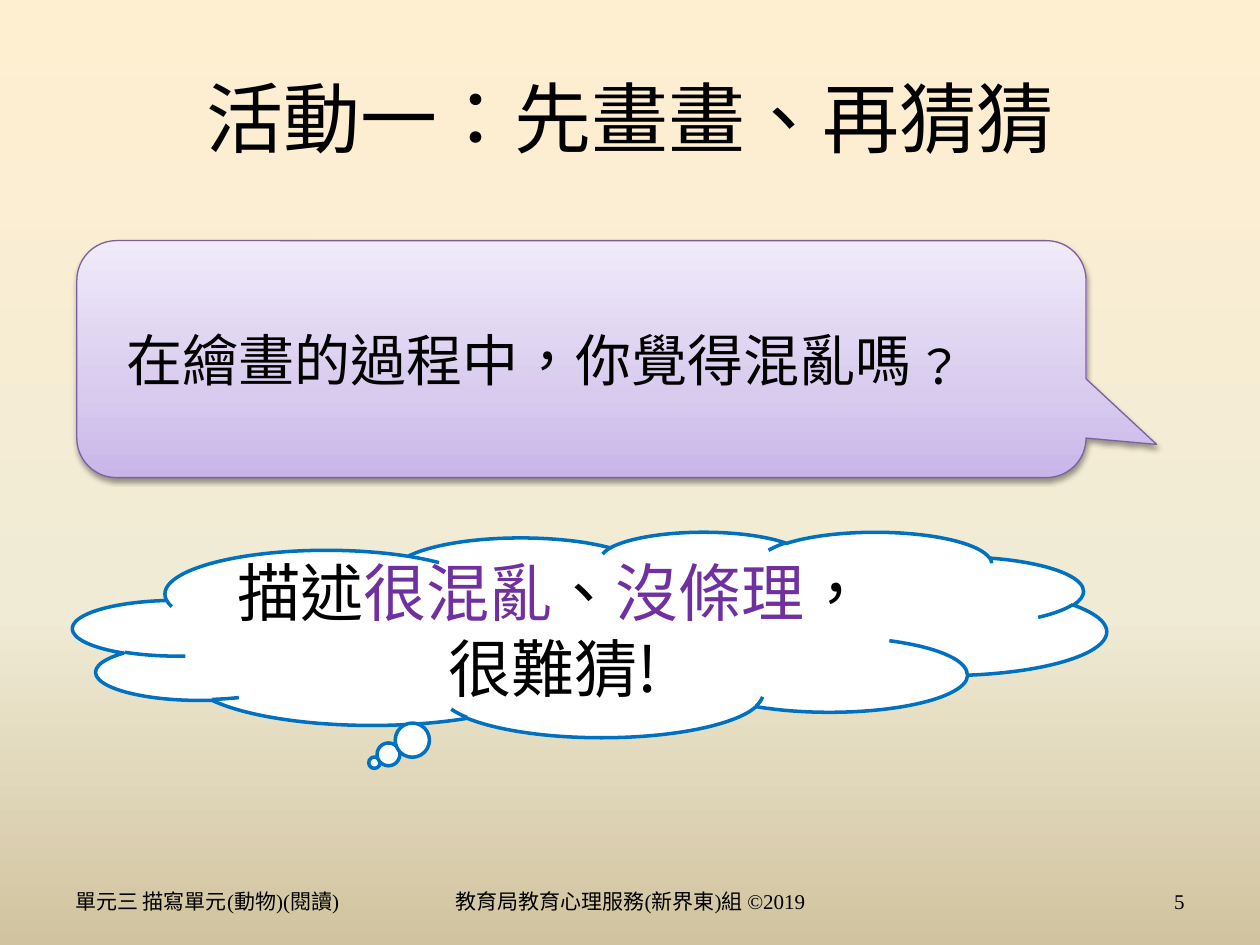
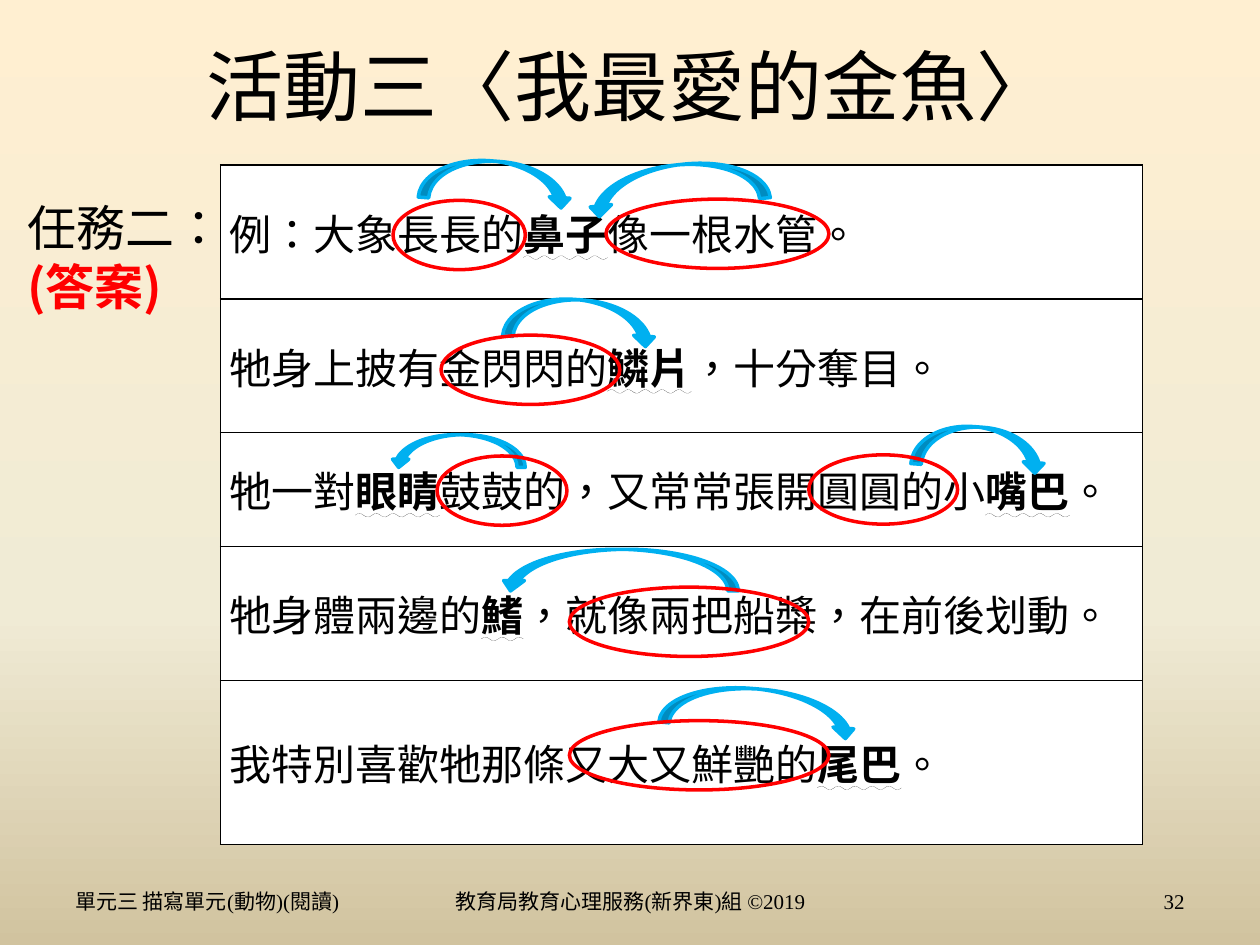
from copy import deepcopy
from lxml.etree import SubElement
from pptx import Presentation
from pptx.dml.color import RGBColor
from pptx.enum.lang import MSO_LANGUAGE_ID
from pptx.enum.shapes import MSO_SHAPE
from pptx.enum.text import MSO_ANCHOR, MSO_UNDERLINE, PP_ALIGN
from pptx.oxml.ns import qn
from pptx.util import Pt

HUE = {
    "ink": "000000", "white": "FFFFFF", "red": "FF0000", "plum": "7030A0",
    "blue": "0070C0", "sky": "00B0F0", "edge": "7D60A0",
    "cream": "FFEFD1", "sand": "F0EBD5", "tan": "D1C39F",
    "lilac": "C9B5E8", "mauve": "D8CBEE", "mist": "F0EAF9",
}
RGB = {name: RGBColor.from_string(code) for name, code in HUE.items()}
NOTO, CABIN, ARIAL, TIMES = "Noto Sans CJK SC", "Cabin", "Arial", "Times New Roman"
LEFT, MID, RIGHT = PP_ALIGN.LEFT, PP_ALIGN.CENTER, PP_ALIGN.RIGHT


def write(para, size, runs, align=LEFT):
    para.alignment = align
    for text, face, hue, bold in runs:
        run = para.add_run()
        run.text = text
        font = run.font
        font.name, font.size, font.bold = face, Pt(size), bold
        font.color.rgb = RGB[hue]
        font.language_id = MSO_LANGUAGE_ID.TRADITIONAL_CHINESE
        SubElement(font._element, qn("a:ea")).set("typeface", NOTO)


def shade(fill, root, angle, stops):
    fill.gradient()
    fill.gradient_angle = angle
    group = next(root.iter(qn("a:gsLst")))
    group.append(deepcopy(group[0]))
    for stop, (place, hue) in zip(fill.gradient_stops, stops):
        stop.position = place
        stop.color.rgb = RGB[hue]


deck = Presentation()
deck.slide_width, deck.slide_height = Pt(720), Pt(540)
master = deck.slide_master
shade(master.background.fill, master._element, 270,
      [(0, "cream"), (0.65, "sand"), (1, "tan")])

pages = []
for number, top, title in [
    ("5", 21.6, [("活動一：先畫畫、再猜猜", CABIN)]),
    ("32", 3.6, [("活動三", NOTO), ("〈我最愛的金魚〉", CABIN)]),
]:
    page = deck.slides.add_slide(deck.slide_layouts[5])
    pages.append(page)
    head = page.shapes.title
    head.left, head.top, head.width, head.height = Pt(36), Pt(top), Pt(648), Pt(90)
    head.text_frame.vertical_anchor = MSO_ANCHOR.MIDDLE
    write(head.text_frame.paragraphs[0], 44,
          [(text, face, "ink", False) for text, face in title], MID)
    for left, width, text, align in [
        (36, 205.2, "單元三 描寫單元(動物)(閱讀)", LEFT),
        (246.2, 228.2, "教育局教育心理服務(新界東)組 ©2019", MID),
        (516.2, 167.8, number, RIGHT),
    ]:
        foot = page.shapes.add_textbox(Pt(left), Pt(500.4), Pt(width), Pt(28.8)).text_frame
        foot.word_wrap = True
        foot.vertical_anchor = MSO_ANCHOR.MIDDLE
        write(foot.paragraphs[0], 12, [(text, TIMES, "ink", False)], align)

draw, task = pages

cloud = draw.shapes.add_shape(MSO_SHAPE.CLOUD_CALLOUT, Pt(41.8), Pt(303.8), Pt(590.4), Pt(117.4))
cloud.shadow.inherit = False
cloud.fill.solid()
cloud.fill.fore_color.rgb = RGB["white"]
cloud.line.color.rgb = RGB["blue"]
cloud.line.width = Pt(2)
cloud.text_frame.word_wrap = True
cloud.text_frame.vertical_anchor = MSO_ANCHOR.MIDDLE
write(cloud.text_frame.paragraphs[0], 36, [
    (text, NOTO, hue, False) for text, hue in [
        ("描述", "ink"), ("很混亂", "plum"), ("、", "ink"),
        ("沒條理", "plum"), ("，很難猜!", "ink")]
], MID)

ask = draw.shapes.add_shape(MSO_SHAPE.ROUNDED_RECTANGULAR_CALLOUT,
                            Pt(43.9), Pt(137.5), Pt(576.7), Pt(135.4))
for spot, value in enumerate([0.57, 0.36, 0.167]):
    ask.adjustments[spot] = value
shade(ask.fill, ask._element, 90, [(0, "lilac"), (0.35, "mauve"), (1, "mist")])
ask.line.color.rgb = RGB["edge"]
ask.line.width = Pt(0.75)
ask.shadow.inherit = False
glow = SubElement(ask._element.spPr.find(qn("a:effectLst")), qn("a:outerShdw"),
                  blurRad=str(Pt(3.1)), dist=str(Pt(1.6)), dir="5400000", rotWithShape="0")
tint = SubElement(glow, qn("a:srgbClr"), val=HUE["ink"])
SubElement(tint, qn("a:alpha"), val="38000")
ask.text_frame.word_wrap = True
ask.text_frame.margin_left = Pt(22)
ask.text_frame.vertical_anchor = MSO_ANCHOR.MIDDLE
write(ask.text_frame.paragraphs[0], 32, [("在繪畫的過程中，你覺得混亂嗎﹖", NOTO, "ink", False)])

rows = [
    (76.5, [("例：大象", CABIN, 0), ("長長的", NOTO, 0), ("鼻子", CABIN, 1),
            ("像一根水管。", NOTO, 0)]),
    (76.5, [("牠身上", ARIAL, 0), ("披有", CABIN, 0), ("金閃閃的", ARIAL, 0),
            ("鱗片", ARIAL, 1), ("，十分奪目。", ARIAL, 0)]),
    (65, [("牠一對", ARIAL, 0), ("眼睛", ARIAL, 1),
          ("鼓鼓的，又常常張開圓圓的小", ARIAL, 0), ("嘴巴", ARIAL, 1), ("。", ARIAL, 0)]),
    (76.5, [("牠身體兩邊的", ARIAL, 0), ("鰭", ARIAL, 1),
            ("，就像兩把船槳，在前後划動。", ARIAL, 0)]),
    (93.7, [("我特別喜歡牠那條又大又鮮艷的", ARIAL, 0), ("尾巴", ARIAL, 1), ("。", ARIAL, 0)]),
]
tall = sum(height for height, parts in rows)
grid = task.shapes.add_table(len(rows), 1, Pt(126), Pt(94.3), Pt(527), Pt(tall)).table
grid.first_row = grid.horz_banding = False
for spot, (height, parts) in enumerate(rows):
    grid.rows[spot].height = Pt(height)
    cell = grid.cell(spot, 0)
    cell.margin_left = cell.margin_right = Pt(5)
    cell.margin_top = cell.margin_bottom = Pt(0)
    cell.vertical_anchor = MSO_ANCHOR.MIDDLE
    for side in ["lnL", "lnR", "lnT", "lnB"]:
        edge = SubElement(cell._tc.tcPr, qn("a:" + side), w=str(Pt(1)))
        SubElement(SubElement(edge, qn("a:solidFill")), qn("a:srgbClr"), val=HUE["ink"])
    cell.fill.solid()
    cell.fill.fore_color.rgb = RGB["white"]
    para = cell.text_frame.paragraphs[0]
    write(para, 24, [(text, face, "ink", bool(key)) for text, face, key in parts])
    for run in para.runs:
        if run.font.bold:
            run.font.underline = MSO_UNDERLINE.WAVY_LINE

note = task.shapes.add_textbox(Pt(8.6), Pt(109.4), Pt(130.3), Pt(74.9)).text_frame
note.word_wrap = True
write(note.paragraphs[0], 28, [("任務二：", NOTO, "ink", False)])
write(note.add_paragraph(), 28, [("(答案)", NOTO, "red", True)])

for left, top, width, height, turn, flip in [
    (239.8, 92.2, 87.8, 23.8, 4.4, False),
    (334.8, 94.3, 104.4, 24.5, 353.6, True),
    (288, 171.4, 87.8, 23.8, 4.4, False),
    (223.2, 248.4, 77, 18.7, 0, True),
    (521.3, 244.1, 77, 23.8, 4.4, False),
    (285.8, 313.9, 136.1, 23.8, 0, True),
    (377.3, 393.8, 113, 23.8, 5.1, False),
]:
    arc = task.shapes.add_shape(MSO_SHAPE.CURVED_DOWN_ARROW,
                                Pt(left), Pt(top), Pt(width), Pt(height))
    arc.shadow.inherit = False
    arc.fill.solid()
    arc.fill.fore_color.rgb = arc.line.color.rgb = RGB["sky"]
    arc.line.width = Pt(2)
    arc.rotation = turn
    if flip:
        arc._element.spPr.xfrm.set("flipH", "1")

for left, top, width in [
    (224.6, 114.5, 75.6), (346.3, 113.8, 127.4), (252, 191.5, 102.2),
    (249.8, 260.6, 74.2), (462.2, 259.9, 85), (325.4, 335.5, 136.8),
    (325.4, 411.8, 148.3),
]:
    ring = task.shapes.add_shape(MSO_SHAPE.OVAL, Pt(left), Pt(top), Pt(width), Pt(39.6))
    ring.shadow.inherit = False
    ring.fill.background()
    ring.line.color.rgb = RGB["red"]
    ring.line.width = Pt(2)

deck.save("out.pptx")
